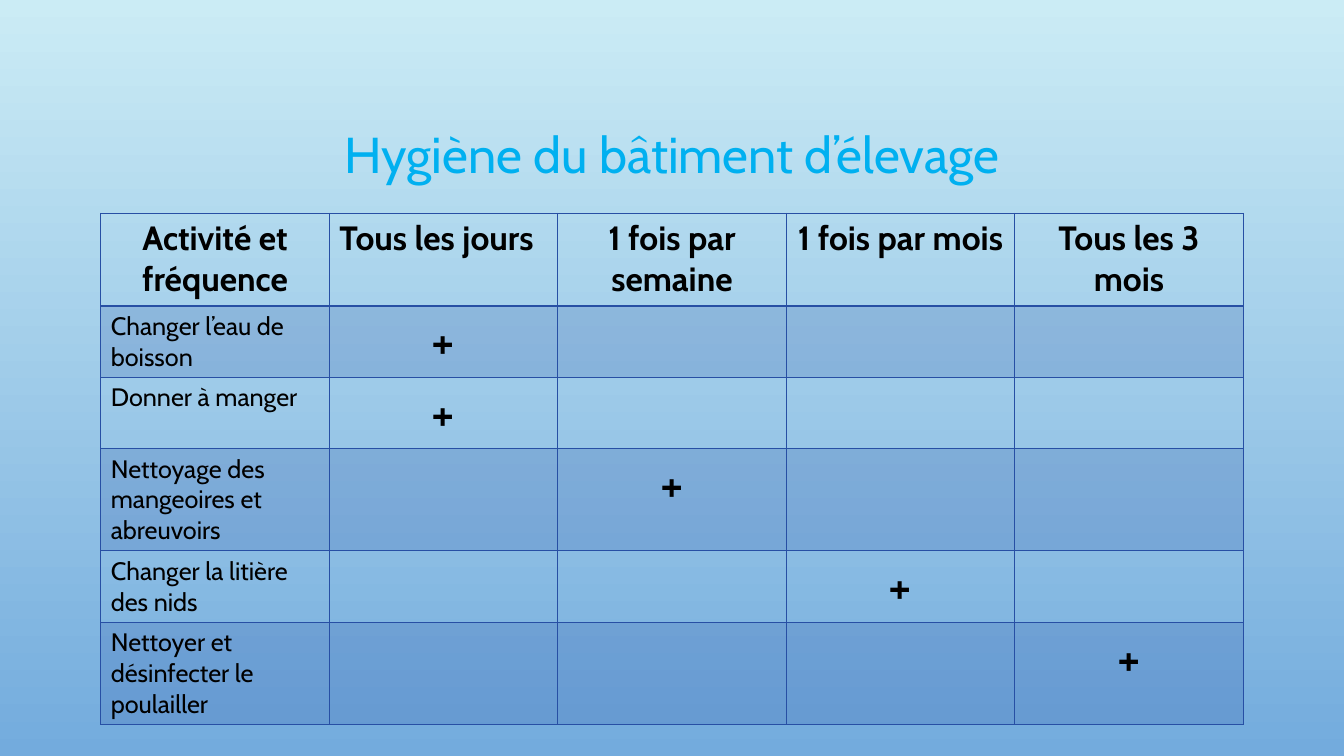
import pptx
import pptx.util
import pptx.dml.color
import pptx.enum.text
import pptx.oxml
import pptx.oxml.ns

Pt = pptx.util.Pt
RGBColor = pptx.dml.color.RGBColor
PP_ALIGN = pptx.enum.text.PP_ALIGN
MIDDLE = pptx.enum.text.MSO_ANCHOR.MIDDLE
qn = pptx.oxml.ns.qn

theme = {
    "sky_top": "CBECF5",
    "sky_bottom": "73ABDD",
    "grid": "274FA4",
    "band_alpha": 20000,
    "title": {"size": Pt(36), "name": "Cabin", "bold": False, "color": "00B0F0"},
    "header": {"size": Pt(24), "name": "Cabin", "bold": True, "color": "000000"},
    "activity": {"size": Pt(18), "name": "Cabin", "bold": False, "color": "000000"},
    "mark": {"size": Pt(36), "name": "Cabin", "bold": False, "color": "000000"},
}


def write(paragraph, text, style, alignment):
    paragraph.alignment = alignment
    run = paragraph.add_run()
    run.text = text
    for attribute, value in theme[style].items():
        if attribute == "color":
            run.font.color.rgb = RGBColor.from_string(value)
        else:
            setattr(run.font, attribute, value)


def border(cell, side, width):
    cell._tc.get_or_add_tcPr().append(pptx.oxml.parse_xml(
        f'<a:{side} xmlns:a="http://schemas.openxmlformats.org/drawingml/2006/main" '
        f'w="{Pt(width)}"><a:solidFill><a:srgbClr val="{theme["grid"]}"/></a:solidFill></a:{side}>'
    ))


deck = pptx.Presentation()
deck.slide_width = Pt(960)
deck.slide_height = Pt(540)
slide = deck.slides.add_slide(deck.slide_layouts[6])

sky = slide.background.fill
sky.gradient()
sky.gradient_angle = 270
for stop, position, color in zip(sky.gradient_stops, (0, 1), ("sky_top", "sky_bottom")):
    stop.position = position
    stop.color.rgb = RGBColor.from_string(theme[color])

title = slide.shapes.add_textbox(Pt(72), Pt(49), Pt(816), Pt(126)).text_frame
for attribute, value in {"word_wrap": True, "vertical_anchor": MIDDLE}.items():
    setattr(title, attribute, value)
title.paragraphs[0].line_spacing = 0.9
write(title.paragraphs[0], "Hygiène du bâtiment d’élevage", "title", PP_ALIGN.CENTER)

frequencies = ["Tous les jours", "1 fois par semaine", "1 fois par mois", "Tous les 3 mois"]
activities = [
    ("Changer l’eau de boisson", "Tous les jours", 51),
    ("Donner à manger", "Tous les jours", 51),
    ("Nettoyage des mangeoires et abreuvoirs", "1 fois par semaine", 73),
    ("Changer la litière des nids", "1 fois par mois", 51),
    ("Nettoyer et désinfecter le poulailler", "Tous les 3 mois", 73),
]
heights = [66] + [height for _, _, height in activities]

schedule = slide.shapes.add_table(
    len(heights), len(frequencies) + 1, Pt(72), Pt(152.5), Pt(816), Pt(sum(heights))
).table
for attribute, value in {"first_row": False, "horz_banding": False}.items():
    setattr(schedule, attribute, value)
for column in schedule.columns:
    column.width = Pt(816 / len(schedule.columns))

for row_index, height in enumerate(heights):
    schedule.rows[row_index].height = Pt(height)
    for cell in schedule.rows[row_index].cells:
        for side, ruled_row in (("lnL", None), ("lnR", None), ("lnT", 1), ("lnB", 0)):
            border(cell, side, 2 if row_index == ruled_row else 1)
        if row_index % 2:
            cell.fill.solid()
            cell.fill.fore_color.rgb = RGBColor.from_string(theme["grid"])
            tint = cell._tc.tcPr.find(qn("a:solidFill")).find(qn("a:srgbClr"))
            tint.append(tint.makeelement(qn("a:alpha"), {"val": str(theme["band_alpha"])}))
        else:
            cell.fill.background()

for column_index, heading in enumerate(["Activité et fréquence"] + frequencies):
    alignment = PP_ALIGN.LEFT if heading == "Tous les jours" else PP_ALIGN.CENTER
    write(schedule.cell(0, column_index).text_frame.paragraphs[0], heading, "header", alignment)

for row_index, (activity, frequency, _) in enumerate(activities, 1):
    mark_column = frequencies.index(frequency) + 1
    write(schedule.cell(row_index, 0).text_frame.paragraphs[0], activity, "activity", PP_ALIGN.LEFT)
    write(schedule.cell(row_index, mark_column).text_frame.paragraphs[0], "+", "mark", PP_ALIGN.CENTER)

deck.save("out.pptx")
